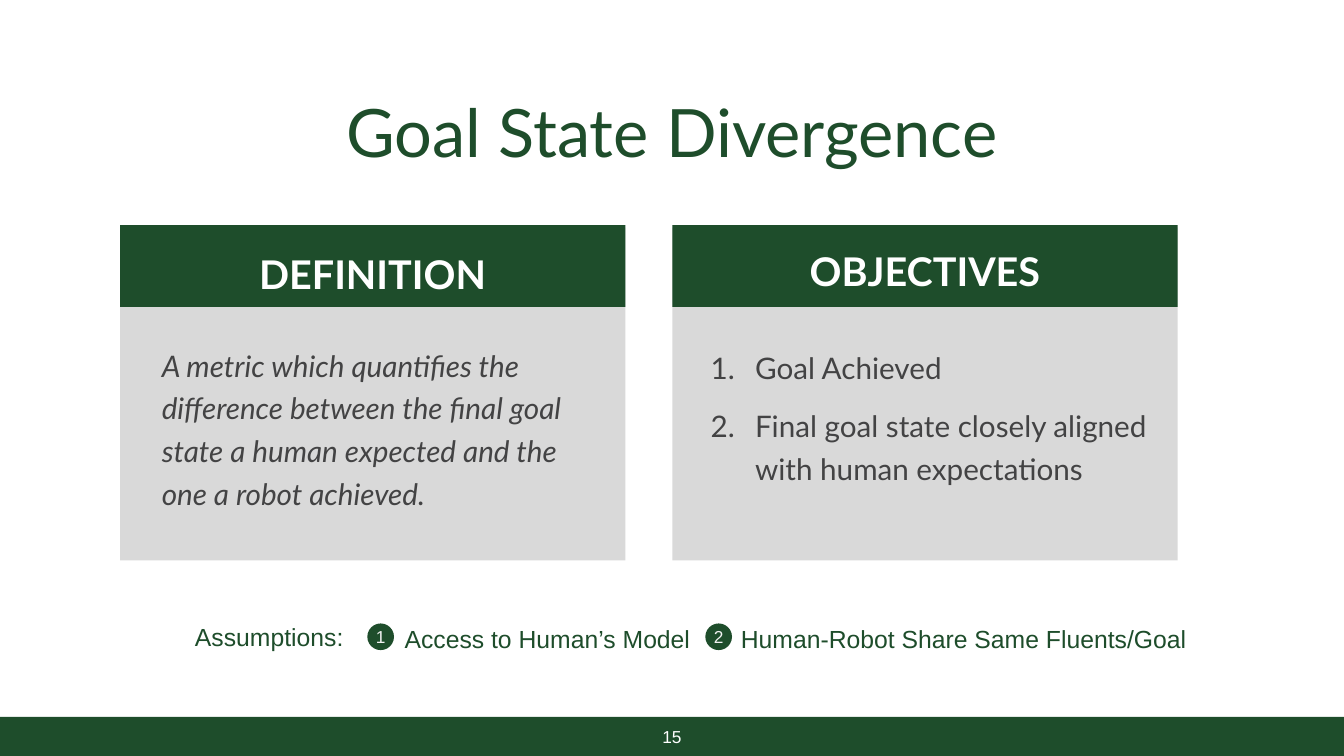
from dataclasses import dataclass

from lxml.etree import SubElement
from pptx import Presentation
from pptx.dml.color import RGBColor
from pptx.enum.shapes import MSO_SHAPE
from pptx.enum.text import MSO_ANCHOR, PP_ALIGN
from pptx.oxml.ns import qn
from pptx.util import Pt

PX = 9144  # one px is 1/100 inch
WIDTH, HEIGHT = 1511, 850

GREEN = RGBColor(0x1E, 0x4D, 0x2B)
GREY = RGBColor(0xD9, 0xD9, 0xD9)
DARK = RGBColor(0x43, 0x43, 0x44)
PALE = RGBColor(0xF2, 0xF2, 0xF2)
WHITE = RGBColor(0xFF, 0xFF, 0xFF)

Box = tuple[int, int, int, int]


@dataclass(frozen=True)
class Style:
    size: int
    color: RGBColor
    font: str = "Arial"
    align: PP_ALIGN = PP_ALIGN.LEFT
    bold: bool = False
    italic: bool = False
    line: float = 1.0
    gap: int = 0
    numbered: bool = False


@dataclass(frozen=True)
class Panel:
    left: int
    head: str
    head_top: int
    lines: list[str]
    body_left: int
    body_top: int
    style: Style


@dataclass(frozen=True)
class Claim:
    number: str
    dot_left: int
    text: str
    box: Box


TITLE = Style(54, GREEN, "Lato", PP_ALIGN.CENTER)
HEAD = Style(32, WHITE, "Lato", PP_ALIGN.CENTER, bold=True, line=1.2)
QUOTE = Style(24, DARK, "Lato", italic=True, line=1.2, gap=6)
LIST = Style(24, DARK, "Lato", line=1.2, gap=6, numbered=True)
LABEL = Style(20, GREEN, align=PP_ALIGN.RIGHT)
NOTE = Style(20, GREEN)
DIGIT = Style(14, PALE, align=PP_ALIGN.CENTER)
PAGE = Style(14, WHITE, align=PP_ALIGN.CENTER)

PANELS = [
    Panel(756, "OBJECTIVES", 262,
          ["Goal Achieved",
           "Final goal state closely aligned with human expectations"],
          789, 381, LIST),
    Panel(135, "DEFINITION", 266,
          ["A metric which quantifies the difference between the final goal "
           "state a human expected and the one a robot achieved."],
          172, 378, QUOTE),
]
CLAIMS = [
    Claim("1", 413, "Access to Human’s Model", (445, 697, 343, 44)),
    Claim("2", 793, "Human-Robot Share Same Fluents/Goal", (823, 696, 522, 44)),
]

deck = Presentation()
deck.slide_width, deck.slide_height = WIDTH * PX, HEIGHT * PX
slide = deck.slides.add_slide(deck.slide_layouts[6])


def scale(box: Box) -> list[int]:
    return [side * PX for side in box]


def add_block(kind: MSO_SHAPE, box: Box, color: RGBColor) -> None:
    shape = slide.shapes.add_shape(kind, *scale(box))
    shape.shadow.inherit = False
    shape.fill.solid()
    shape.fill.fore_color.rgb = color
    shape.line.fill.background()


def add_number(para) -> None:
    props = para._p.get_or_add_pPr()
    props.set("marL", str(50 * PX))
    props.set("indent", str(-50 * PX))
    SubElement(props, qn("a:buFont"), typeface="+mj-lt")
    SubElement(props, qn("a:buAutoNum"), type="arabicPeriod")


def add_text(box: Box, lines: list[str], style: Style):
    frame = slide.shapes.add_textbox(*scale(box)).text_frame
    frame.word_wrap = True
    for index, line in enumerate(lines):
        para = frame.add_paragraph() if index else frame.paragraphs[0]
        para.text = line
        para.alignment = style.align
        para.line_spacing = style.line
        para.space_before = Pt(style.gap if index else 0)
        para.space_after = Pt(style.gap)
        if style.numbered:
            add_number(para)
        font = para.font
        font.name, font.size = style.font, Pt(style.size)
        font.bold, font.italic = style.bold, style.italic
        font.color.rgb = style.color
    return frame


def add_panel(panel: Panel) -> None:
    add_block(MSO_SHAPE.RECTANGLE, (panel.left, 256, 568, 374), GREY)
    add_block(MSO_SHAPE.RECTANGLE, (panel.left, 253, 568, 92), GREEN)
    add_text((panel.left, panel.head_top, 568, 60), [panel.head], HEAD)
    add_text((panel.body_left, panel.body_top, 518, 214), panel.lines, panel.style)


def add_claim(claim: Claim) -> None:
    add_block(MSO_SHAPE.OVAL, (claim.dot_left, 701, 30, 30), GREEN)
    add_text((claim.dot_left - 10, 699, 50, 34), [claim.number], DIGIT)
    add_text(claim.box, [claim.text], NOTE)


# Title
title = add_text((0, 91, WIDTH, 111), ["Goal State Divergence"], TITLE)
title.vertical_anchor = MSO_ANCHOR.BOTTOM
title.margin_top = title.margin_bottom = 10 * PX

# Two panels
for panel in PANELS:
    add_panel(panel)

# Assumptions
add_text((74, 694, 322, 44), ["Assumptions:"], LABEL)
for claim in CLAIMS:
    add_claim(claim)

# Footer
add_block(MSO_SHAPE.RECTANGLE, (0, 806, WIDTH, 44), GREEN)
add_text((0, 812, WIDTH, 34), ["15"], PAGE)

deck.save("out.pptx")
